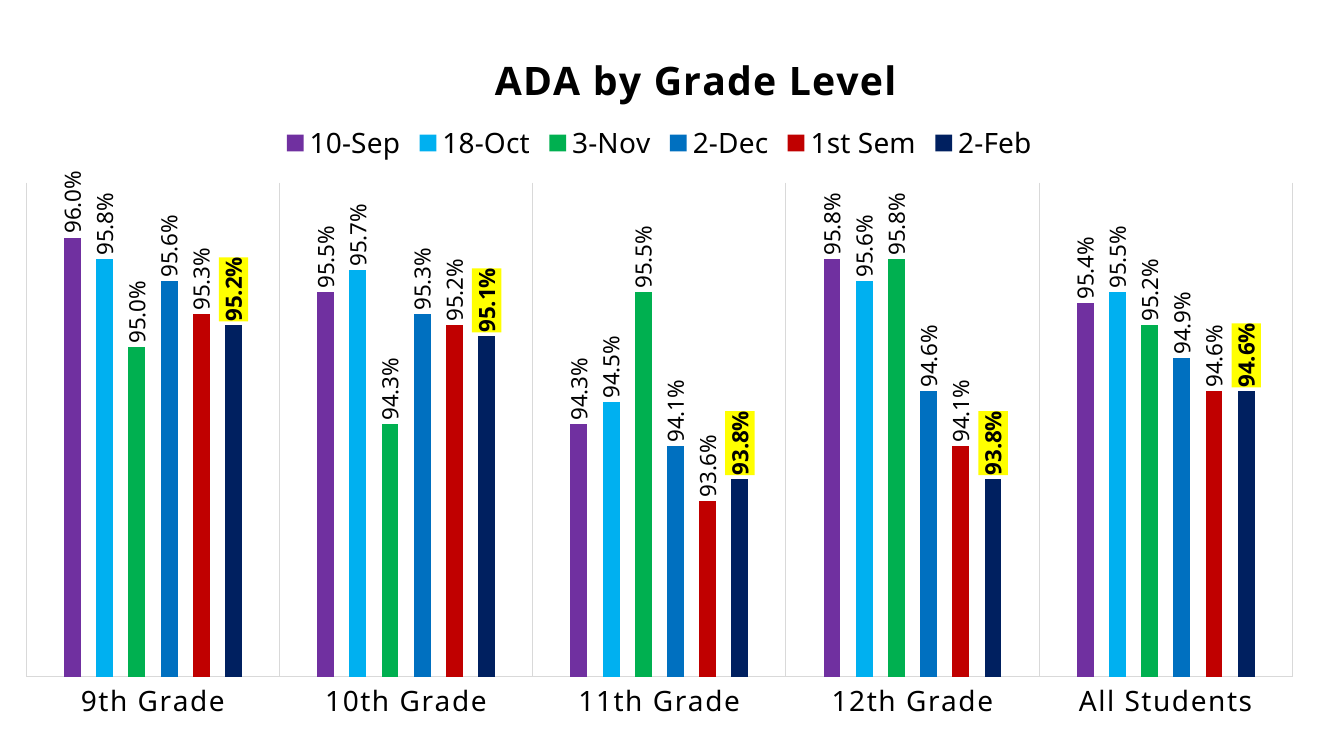
from pptx import Presentation
from pptx.chart.data import CategoryChartData
from pptx.dml.color import RGBColor
from pptx.enum.chart import XL_CHART_TYPE, XL_LABEL_POSITION, XL_LEGEND_POSITION, XL_TICK_MARK
from pptx.oxml import parse_xml
from pptx.oxml.ns import nsdecls
from pptx.util import Inches, Pt

COLORS = {
    "text": "000000", "grid": "D9D9D9", "highlight": "FFFF00",
    "10-Sep": "7030A0", "18-Oct": "00B0F0", "3-Nov": "00B050",
    "2-Dec": "0070C0", "1st Sem": "C00000", "2-Feb": "002060",
}
GRADES = ["9th Grade", "10th Grade", "11th Grade", "12th Grade", "All Students"]
ATTENDANCE = {
    "10-Sep": [0.96, 0.955, 0.943, 0.958, 0.954],
    "18-Oct": [0.958, 0.957, 0.945, 0.956, 0.955],
    "3-Nov": [0.95, 0.943, 0.955, 0.958, 0.952],
    "2-Dec": [0.956, 0.953, 0.941, 0.946, 0.949],
    "1st Sem": [0.953, 0.952, 0.936, 0.941, 0.946],
    "2-Feb": [0.952, 0.951, 0.938, 0.938, 0.946],
}
LATEST = "2-Feb"


def style_font(font, size, bold=False):
    font.name = "Noto Sans"
    font.size = Pt(size)
    font.bold = bold
    font.color.rgb = RGBColor.from_string(COLORS["text"])


def place(parent, index, target, **fractions):
    for layout in parent.xpath("c:layout"):
        parent.remove(layout)
    values = "".join(f'<c:{name} val="{value}"/>' for name, value in fractions.items())
    parent.insert(index, parse_xml(
        f'<c:layout {nsdecls("c")}><c:manualLayout>{target}'
        f'<c:xMode val="edge"/><c:yMode val="edge"/>{values}</c:manualLayout></c:layout>'))


prs = Presentation()
prs.slide_width = Inches(13.33)
prs.slide_height = Inches(7.5)
slide = prs.slides.add_slide(prs.slide_layouts[6])

attendance_data = CategoryChartData(number_format="0.0%")
attendance_data.categories = GRADES
for period, rates in ATTENDANCE.items():
    attendance_data.add_series(period, rates)
chart = slide.shapes.add_chart(
    XL_CHART_TYPE.COLUMN_CLUSTERED, Inches(0), Inches(0.13),
    Inches(13.08), Inches(7.16), attendance_data).chart
style_font(chart.font, 10)

chart.has_title = True
heading = chart.chart_title.text_frame
heading.text = "ADA by Grade Level"
heading_run = heading.paragraphs[0].runs[0]
style_font(heading_run.font, 28, bold=True)
chart.chart_title.include_in_layout = False

chart.has_legend = True
chart.legend.position = XL_LEGEND_POSITION.TOP
chart.legend.include_in_layout = False
style_font(chart.legend.font, 20)

grades_axis = chart.category_axis
grades_axis.major_tick_mark = XL_TICK_MARK.NONE
grades_axis.minor_tick_mark = XL_TICK_MARK.NONE
grades_axis.has_major_gridlines = True
style_font(grades_axis.tick_labels.font, 20)
for line in (grades_axis.format.line, grades_axis.major_gridlines.format.line):
    line.color.rgb = RGBColor.from_string(COLORS["grid"])
    line.width = Pt(0.75)

rates_axis = chart.value_axis
rates_axis.minimum_scale = 0.92
rates_axis.maximum_scale = 0.965
rates_axis.has_major_gridlines = False
rates_axis.tick_labels.number_format = "0.0%"
rates_axis.tick_labels.number_format_is_linked = False
rates_axis.visible = False

columns = chart.plots[0]
columns.gap_width = 444
columns.overlap = -90
columns.vary_by_categories = False
for period in columns.series:
    period.invert_if_negative = False
    period.format.fill.solid()
    period.format.fill.fore_color.rgb = RGBColor.from_string(COLORS[period.name])
    labels = period.data_labels
    labels.show_value = True
    labels.position = XL_LABEL_POSITION.OUTSIDE_END
    labels.number_format = "0.0%"
    labels.number_format_is_linked = False
    style_font(labels.font, 16, bold=period.name == LATEST)

root = chart.element
for label_body in root.xpath(".//c:dLbls/c:txPr/a:bodyPr"):
    label_body.set("rot", "-5400000")
    label_body.set("vert", "horz")
latest_text = root.xpath(".//c:ser/c:dLbls/c:txPr")[-1]
latest_text.addprevious(parse_xml(
    f'<c:spPr {nsdecls("c", "a")}><a:solidFill>'
    f'<a:srgbClr val="{COLORS["highlight"]}"/></a:solidFill></c:spPr>'))
for spaced in root.xpath(".//c:catAx/c:txPr//a:defRPr | .//c:title//a:rPr"):
    spaced.set("spc", "100")

place(root.xpath(".//c:title")[0], 1, "", x=0.37, y=0.04)
place(root.xpath(".//c:legend")[0], 1, "", x=0.21, y=0.15, w=0.58, h=0.06)
place(root.xpath(".//c:plotArea")[0], 0, '<c:layoutTarget val="inner"/>',
      x=0.02, y=0.235, w=0.96, h=0.685)

prs.save("out.pptx")
